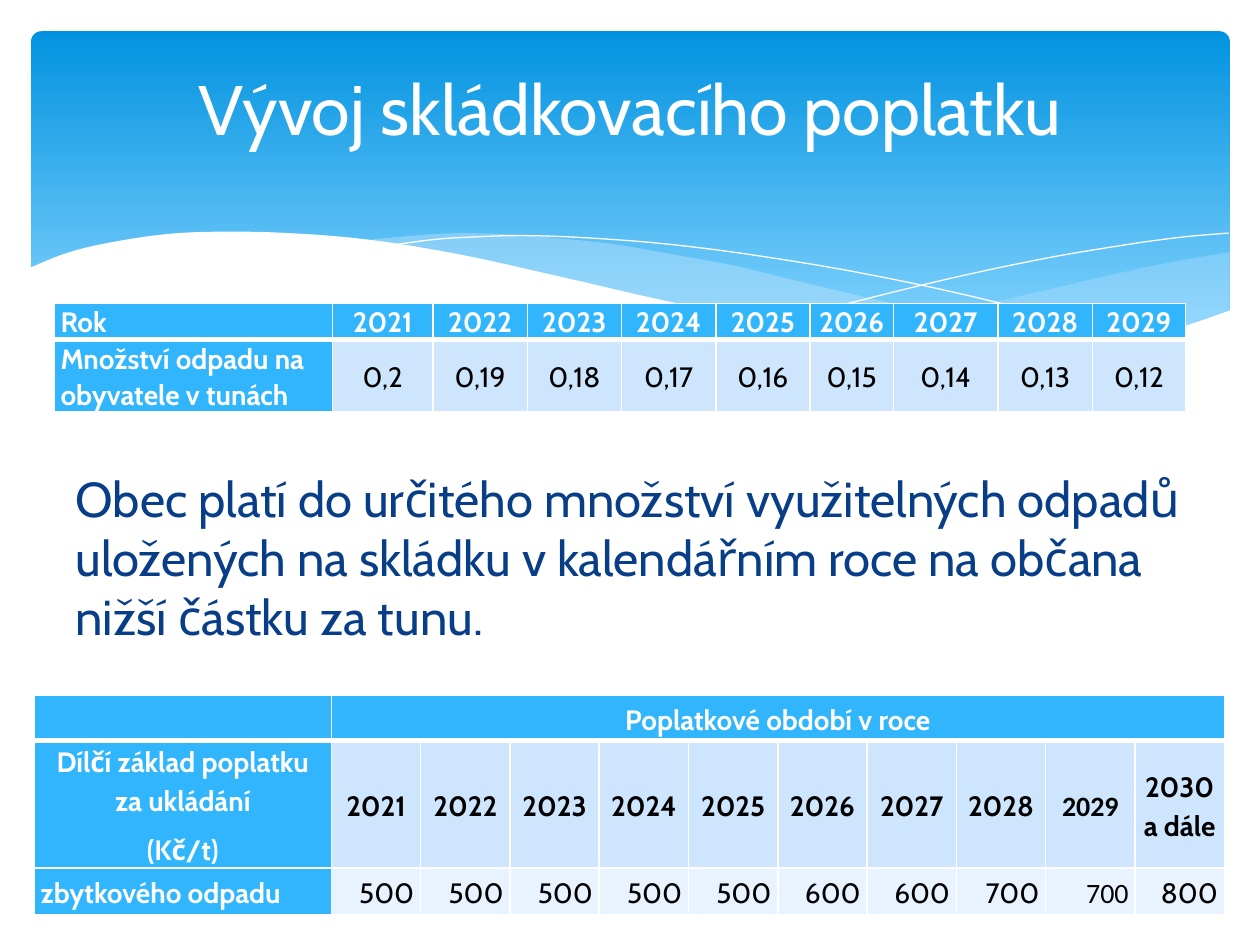
import lxml.etree
import pptx
import pptx.dml.color
import pptx.enum.shapes
import pptx.enum.text
import pptx.oxml
import pptx.oxml.ns
import pptx.util

Cm = pptx.util.Cm
Pt = pptx.util.Pt
RGBColor = pptx.dml.color.RGBColor
ALIGN = pptx.enum.text.PP_ALIGN
MIDDLE = pptx.enum.text.MSO_ANCHOR.MIDDLE

WHITE = RGBColor(0xFF, 0xFF, 0xFF)
BLACK = RGBColor(0, 0, 0)
NAVY = RGBColor(0x07, 0x3E, 0x87)
SKY_TOP = RGBColor(0x02, 0x93, 0xE0)
SKY_BOTTOM = RGBColor(0x83, 0xD3, 0xFE)
WAVE = RGBColor(0xC6, 0xE7, 0xFC)
HEADER = RGBColor(0x31, 0xB6, 0xFD)
BAND_DARK = RGBColor(0xCE, 0xE5, 0xFE)
BAND_LIGHT = RGBColor(0xE8, 0xF3, 0xFF)
FONT = "Cabin"

# Wave outlines, in centimetres
RIGHT_WAVE_TOP = [(24.79, 5.08), (23.75, 5.26), (22.63, 5.49), (21.13, 5.84),
                  (19.79, 6.15), (18.52, 6.43), (17.35, 6.65), (16.79, 6.73)]
RIGHT_WAVE_BOTTOM = [(16.79, 6.73), (18.26, 6.91), (19.53, 7.01), (20.68, 7.06),
                     (21.69, 7.03), (22.58, 6.91), (23.39, 6.73), (24.1, 6.53),
                     (24.79, 6.27)]
MIDDLE_WAVE_TOP = [(22.68, 6.93), (21.26, 6.73), (19.69, 6.45), (17.93, 6.1),
                   (15.98, 5.64), (14.83, 5.36), (13.74, 5.16), (12.42, 4.93),
                   (11.23, 4.8), (10.13, 4.72), (9.17, 4.7), (8.33, 4.75), (7.26, 4.85)]
MIDDLE_WAVE_BOTTOM = [(7.26, 4.85), (8.69, 5.05), (10.26, 5.36), (11.4, 5.64),
                      (13.46, 6.1), (15.27, 6.48), (16.89, 6.76), (18.34, 6.96),
                      (19.63, 7.04), (20.78, 7.06), (21.77, 7.01), (22.68, 6.93)]
FALLING_LINE = [(7.85, 4.95), (8.74, 4.83), (9.5, 4.78), (10.57, 4.75), (11.91, 4.8),
                (13.54, 4.93), (15.44, 5.18), (17.65, 5.56), (20.19, 6.12), (23.04, 6.91)]
RISING_LINE = [(15.57, 6.53), (16.59, 6.25), (18.29, 5.82), (19.71, 5.49),
               (21.23, 5.18), (22.73, 4.93), (23.83, 4.78), (24.77, 4.7)]
WHITE_WAVE_TOP = [(24.82, 6.25), (23.62, 6.65), (22.23, 6.93), (20.55, 7.04),
                  (18.44, 6.91), (15.9, 6.55), (13.44, 6.07), (11.35, 5.59),
                  (9.27, 5.13), (7.42, 4.83), (5.84, 4.7), (4.5, 4.67), (3.35, 4.72),
                  (2.16, 4.9), (1.32, 5.11), (0.58, 5.41)]
WHITE_WAVE_BASE = [(0.58, 8.36), (24.82, 8.36)]

YEARS = [str(year) for year in range(2021, 2030)]
WASTE_ROWS = [
    ["Rok"] + YEARS,
    ["Množství odpadu na\nobyvatele v tunách", "0,2", "0,19", "0,18", "0,17",
     "0,16", "0,15", "0,14", "0,13", "0,12"],
]
FEE_ROWS = [
    ["", "Poplatkové období v roce"] + [""] * 9,
    ["Dílčí základ poplatku za ukládání\n(Kč/t)"] + YEARS + ["2030 a dále"],
    ["zbytkového odpadu"] + ["500"] * 5 + ["600"] * 2 + ["700"] * 2 + ["800"],
]


def smooth(points, steps=4):
    """Return points of a Catmull-Rom curve through the given points."""
    padded = [points[0]] + points + [points[-1]]
    curve = [points[0]]
    for a, b, c, d in zip(padded, padded[1:], padded[2:], padded[3:]):
        for step in range(1, steps + 1):
            t = step / steps
            curve.append(tuple(
                (2 * q + (r - p) * t + (2 * p - 5 * q + 4 * r - s) * t ** 2
                 + (3 * q - p - 3 * r + s) * t ** 3) / 2
                for p, q, r, s in zip(a, b, c, d)))
    return curve


def add_outline(slide, points, close):
    vertices = [(Cm(x), Cm(y)) for x, y in points]
    builder = slide.shapes.build_freeform(*vertices[0])
    builder.add_line_segments(vertices[1:], close=close)
    shape = builder.convert_to_shape()
    shape.shadow.inherit = False
    return shape


def add_wave(slide, points, color, opacity=100):
    shape = add_outline(slide, points, True)
    shape.fill.solid()
    shape.fill.fore_color.rgb = color
    shape.line.fill.background()
    if opacity < 100:
        color_element = shape.element.spPr.find(".//" + pptx.oxml.ns.qn("a:srgbClr"))
        lxml.etree.SubElement(color_element, pptx.oxml.ns.qn("a:alpha"),
                              val=str(opacity * 1000))


def add_hairline(slide, points):
    shape = add_outline(slide, smooth(points), False)
    shape.fill.background()
    shape.line.color.rgb = WHITE
    shape.line.width = Pt(0)


def add_banner(slide):
    banner = slide.shapes.add_shape(pptx.enum.shapes.MSO_SHAPE.ROUNDED_RECTANGLE,
                                    Cm(0.63), Cm(0.63), Cm(24.16), Cm(6.86))
    banner.adjustments[0] = 0.03
    banner.shadow.inherit = False
    banner.line.fill.background()
    banner.fill.gradient()
    banner.fill.gradient_angle = 270
    stops = banner.fill.gradient_stops
    for stop, position, color in zip(stops, (0, 0.9), (SKY_TOP, SKY_BOTTOM)):
        stop.position = position
        stop.color.rgb = color


def format_runs(paragraph, size, color, bold=False, font=FONT):
    for run in paragraph.runs:
        run.font.size = Pt(size)
        run.font.name = font
        run.font.bold = bold
        run.font.color.rgb = color


def fill_placeholder(slide, shape, box, text, size, color, alignment, anchor):
    """Place and format a placeholder, and bring it in front of the banner."""
    shape.left, shape.top, shape.width, shape.height = map(Cm, box)
    frame = shape.text_frame
    frame.text = text
    frame.auto_size = pptx.enum.text.MSO_AUTO_SIZE.NONE
    frame.vertical_anchor = anchor
    paragraph = frame.paragraphs[0]
    paragraph.alignment = alignment
    format_runs(paragraph, size, color)
    slide.shapes.element.append(shape.element)
    return paragraph


def remove_bullet(paragraph):
    properties = paragraph._p.get_or_add_pPr()
    properties.set("marL", "0")
    properties.set("indent", "0")
    lxml.etree.SubElement(properties, pptx.oxml.ns.qn("a:buNone"))


def set_borders(cell, bottom_width):
    properties = cell._tc.get_or_add_tcPr()
    for index, side in enumerate("LRTB"):
        width = Pt(bottom_width if side == "B" else 1)
        properties.insert(index, pptx.oxml.parse_xml(
            f'<a:ln{side} {pptx.oxml.ns.nsdecls("a")} w="{width}"><a:solidFill>'
            f'<a:srgbClr val="{WHITE}"/></a:solidFill></a:ln{side}>'))


def add_year_table(slide, box, widths, heights, rows, fills, spacing, label_alignments,
                   value_alignments, bold_rows, margin, calibri_column=None):
    """Add a table with a blue header row and a blue label column."""
    table = slide.shapes.add_table(len(rows), len(widths), *map(Cm, box)).table
    for column, width in zip(table.columns, widths):
        column.width = Cm(width)
    for row, height in zip(table.rows, heights):
        row.height = Cm(height)
    line_spacing, space_before, space_after = spacing
    for i, texts in enumerate(rows):
        for j, text in enumerate(texts):
            cell = table.cell(i, j)
            is_header = i == 0 or j == 0
            cell.fill.solid()
            cell.fill.fore_color.rgb = HEADER if is_header else fills[i]
            set_borders(cell, 3 if i == 0 else 1)
            cell.vertical_anchor = MIDDLE
            cell.margin_top = cell.margin_bottom = 0
            cell.margin_left = cell.margin_right = Cm(0.13 if j == 0 else margin)
            cell.text_frame.text = text
            for paragraph in cell.text_frame.paragraphs:
                paragraph.alignment = (label_alignments if j == 0 else value_alignments)[i]
                paragraph.line_spacing = line_spacing
                paragraph.space_before = Pt(space_before)
                paragraph.space_after = Pt(0 if "\n" in text else space_after)
                format_runs(paragraph, 16, WHITE if is_header else BLACK,
                            j == 0 or i in bold_rows,
                            "Calibri" if j == calibri_column and i > 0 else FONT)
    return table


def main():
    presentation = pptx.Presentation()
    presentation.slide_width, presentation.slide_height = Cm(25.4), Cm(19.05)
    slide = presentation.slides.add_slide(presentation.slide_layouts[1])

    add_banner(slide)
    add_wave(slide, smooth(RIGHT_WAVE_TOP) + smooth(RIGHT_WAVE_BOTTOM), WAVE, 29)
    add_wave(slide, smooth(MIDDLE_WAVE_TOP) + smooth(MIDDLE_WAVE_BOTTOM), WAVE, 40)
    add_hairline(slide, FALLING_LINE)
    add_hairline(slide, RISING_LINE)
    add_wave(slide, smooth(WHITE_WAVE_TOP) + WHITE_WAVE_BASE, WHITE)

    fill_placeholder(slide, slide.shapes.title, (1.27, 0.58, 22.86, 3.18),
                     "Vývoj skládkovacího poplatku", 40, WHITE, ALIGN.CENTER, MIDDLE)
    body = fill_placeholder(
        slide, slide.placeholders[1], (1.27, 9.32, 23.62, 5.28),
        "Obec platí do určitého množství využitelných odpadů uložených na skládku "
        "v kalendářním roce na občana nižší částku za tunu.",
        28, NAVY, ALIGN.LEFT, pptx.enum.text.MSO_ANCHOR.TOP)
    remove_bullet(body)

    fee_table = add_year_table(
        slide, (0.69, 14.02, 23.99, 4.4), [5.99] + [1.8] * 10, [0.91, 2.54, 0.95],
        FEE_ROWS, [HEADER, BAND_DARK, BAND_LIGHT], (1.15, 6, 0),
        [ALIGN.CENTER, ALIGN.CENTER, ALIGN.LEFT],
        [ALIGN.CENTER, ALIGN.CENTER, ALIGN.RIGHT], (0, 1), 0.13, calibri_column=9)
    fee_table.cell(0, 1).merge(fee_table.cell(0, 10))
    add_year_table(
        slide, (1.09, 6.12, 22.86, 2.17),
        [5.61, 2.03] + [1.9] * 4 + [1.68, 2.11, 1.9, 1.88], [0.73, 1.44],
        WASTE_ROWS, [HEADER, BAND_DARK], (1.07, 0, 8),
        [ALIGN.LEFT] * 2, [ALIGN.CENTER] * 2, (0,), 0)

    presentation.save("out.pptx")


if __name__ == "__main__":
    main()
